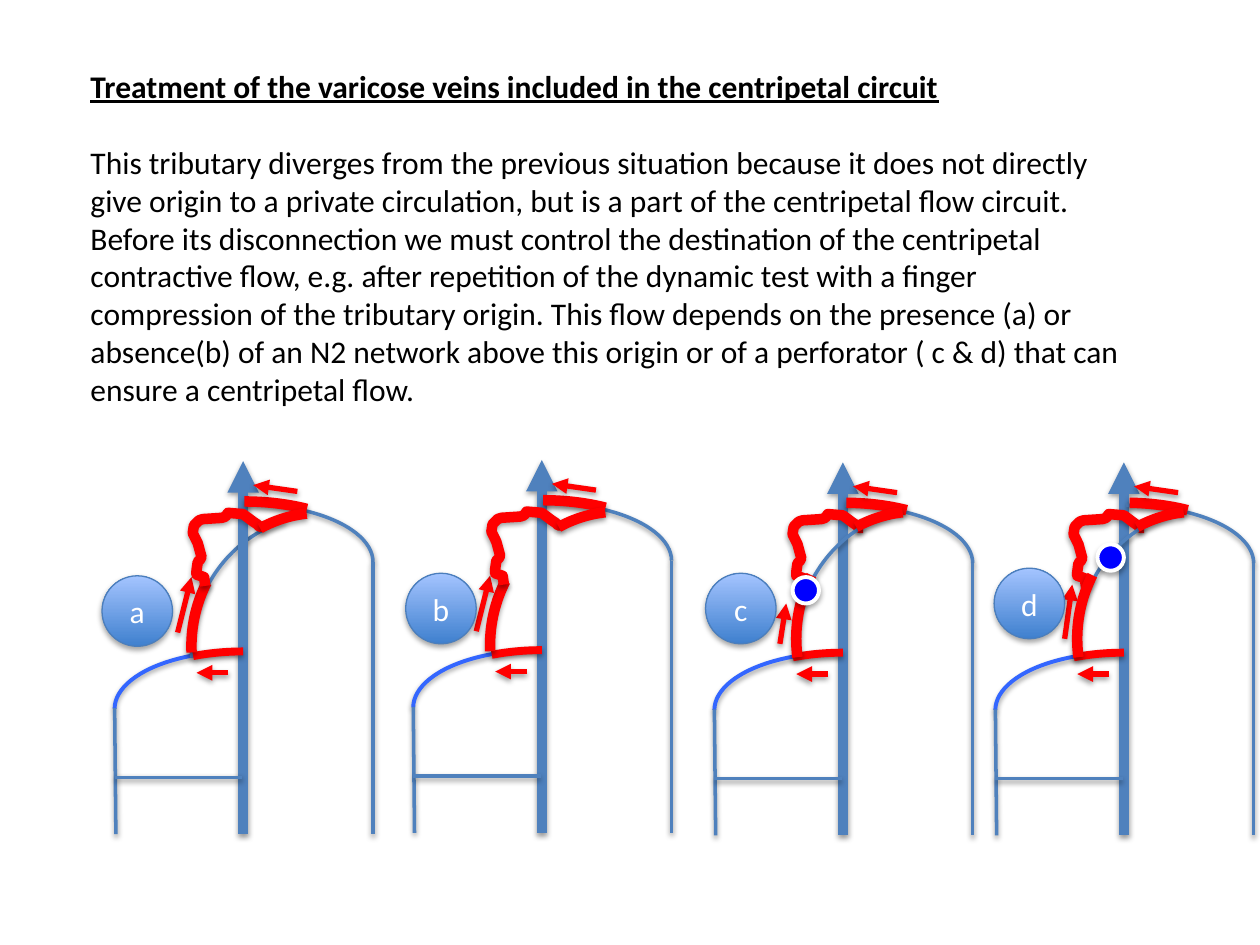
import pptx
import pptx.dml.color
import pptx.enum.shapes
import pptx.enum.text
import pptx.oxml
import pptx.oxml.ns
import pptx.util

Inches, Pt = pptx.util.Inches, pptx.util.Pt
Kind = pptx.enum.shapes.MSO_SHAPE

BLUE, VEIN, RED, WHITE = "4F81BD", "3366FF", "FF0000", "FFFFFF"

TITLE = "Treatment of the varicose veins included in the centripetal circuit"
BODY = (
    "This tributary diverges from the previous situation because it does not "
    "directly give origin to a private circulation, but is a part of the "
    "centripetal flow circuit. Before its disconnection we must control the "
    "destination of the centripetal contractive flow, e.g. after repetition of "
    "the dynamic test with a finger compression of the tributary origin. This "
    "flow depends on the presence (a) or absence(b) of an N2 network above this "
    "origin or of a perforator ( c & d) that can ensure a centripetal flow."
)

# Winding tributary, in inches, as it runs in the first leg
COIL = [
    (1.63, 4.65), (1.62, 4.58), (1.56, 4.56), (1.56, 4.53), (1.57, 4.46),
    (1.59, 4.44), (1.6, 4.42), (1.57, 4.31), (1.56, 4.29), (1.53, 4.23),
    (1.54, 4.17), (1.56, 4.15), (1.58, 4.13), (1.61, 4.12), (1.76, 4.11),
    (1.79, 4.1), (1.81, 4.07), (1.93, 4.08), (2.01, 4.14), (2.04, 4.16),
    (2.06, 4.18), (2.09, 4.18),
]

# Each leg: shift from the first, badge place, rising arrow, start of the top
# arc; "inner" is the blue arc; "late" puts the inner arcs on top; "dot" is
# the perforator
RISE = ((1.41, 5.02), (1.52, 4.58))
LEGS = [
    dict(name="a", shift=(0, 0), badge=(0.81, 4.57), rise=RISE, start=162,
         inner=True, late=False, dot=None),
    dict(name="b", shift=(2.37, -0.01), badge=(3.22, 4.55), rise=RISE, start=162,
         inner=False, late=False, dot=None),
    dict(name="c", shift=(4.76, 0.01), badge=(5.6, 4.55),
         rise=((1.43, 5.1), (1.48, 4.78)), start=163.25,
         inner=True, late=True, dot=(1.53, 4.57)),
    dict(name="d", shift=(6.99, 0.01), badge=(7.89, 4.51),
         rise=((1.46, 5.06), (1.52, 4.63)), start=164.64,
         inner=True, late=True, dot=(1.72, 4.31)),
]


def color(code):
    return pptx.dml.color.RGBColor.from_string(code)


def write(para, text, size=18, ink="000000", bold=False, under=False,
          align=None, after=0):
    run = para.add_run()
    run.text = text
    font = run.font
    font.name, font.size = "Calibri", Pt(size)
    font.bold, font.underline = bold, under
    font.color.rgb = color(ink)
    para.alignment = align
    para.space_after = Pt(after)


def shade(shape, alpha=38, dist=1.6):
    """Replace the theme's shadow with a soft one straight below."""
    shape._element.spPr.append(pptx.oxml.parse_xml(
        f'<a:effectLst {pptx.oxml.ns.nsdecls("a")}>'
        f'<a:outerShdw blurRad="{Pt(3.1)}" dist="{Pt(dist)}" dir="5400000" '
        f'rotWithShape="0"><a:srgbClr val="000000">'
        f'<a:alpha val="{alpha * 1000}"/></a:srgbClr></a:outerShdw></a:effectLst>'))


class Board:
    """Holds the slide, the line style and the shift of the current leg."""

    def __init__(self, slide):
        self.slide = slide
        self.shapes = slide.shapes
        self.shift = (0, 0)

    def place(self, x, y):
        return Inches(x + self.shift[0]), Inches(y + self.shift[1])

    def stroke(self, shape, ink, width):
        shape.line.color.rgb = color(ink)
        shape.line.width = Pt(width)

    def arc(self, x, y, wide, high, ink, width, span=None, flip=True):
        shape = self.shapes.add_shape(
            Kind.ARC, *self.place(x, y), Inches(wide), Inches(high))
        if span:
            shape.adjustments[0], shape.adjustments[1] = span
        if flip:
            shape._element.spPr.xfrm.set("flipH", "1")
        shape.fill.background()
        self.stroke(shape, ink, width)
        shade(shape)

    def line(self, start, end, ink=BLUE, width=2, tip=None):
        link = self.shapes.add_connector(
            pptx.enum.shapes.MSO_CONNECTOR.STRAIGHT,
            *self.place(*start), *self.place(*end))
        self.stroke(link, ink, width)
        if tip:
            link._element.spPr.find(pptx.oxml.ns.qn("a:ln")).append(
                pptx.oxml.parse_xml(
                    f'<a:{tip} {pptx.oxml.ns.nsdecls("a")} type="triangle"/>'))
        shade(link)

    def arrow(self, start, end):
        self.line(start, end, RED, 3, "tailEnd")

    def trail(self, points, ink, width):
        spots = [self.place(*point) for point in points]
        pen = self.shapes.build_freeform(*spots[0])
        pen.add_line_segments(spots[1:], close=False)
        shape = pen.convert_to_shape()
        shape.fill.background()
        self.stroke(shape, ink, width)
        shade(shape)

    def disc(self, x, y, size, ink, width):
        shape = self.shapes.add_shape(
            Kind.OVAL, *self.place(x, y), Inches(size), Inches(size))
        self.stroke(shape, ink, width)
        shade(shape, 35, 1.8)
        return shape

    def dot(self, x, y):
        shape = self.disc(x, y, 0.21, WHITE, 2.25)
        shape.fill.solid()
        shape.fill.fore_color.rgb = color("0000FF")

    def badge(self, x, y, name):
        shape = self.disc(x, y, 0.56, "4B7EBC", 0.75)
        shape.fill.gradient()
        shape.fill.gradient_angle = 90
        for stop, ink in zip(shape.fill.gradient_stops, ("3F80CE", "A4C4FF")):
            stop.color.rgb = color(ink)
        frame = shape.text_frame
        frame.vertical_anchor = pptx.enum.text.MSO_ANCHOR.MIDDLE
        write(frame.paragraphs[0], name, ink=WHITE,
              align=pptx.enum.text.PP_ALIGN.CENTER)

    def text(self, x, y, wide, high):
        frame = self.shapes.add_textbox(
            *self.place(x, y), Inches(wide), Inches(high)).text_frame
        frame.word_wrap = True
        frame.auto_size = pptx.enum.text.MSO_AUTO_SIZE.SHAPE_TO_FIT_TEXT
        return frame

    def leg(self, leg):
        self.shift = leg["shift"]
        late = leg["late"]

        def blue():
            if leg["inner"]:
                spot = (1.56, 4.03) if late else (1.52, 4.09)
                self.arc(*spot, 2.07, 2.16, BLUE, 2, (171.44, 1.63))

        def red():
            spot, end = ((1.56, 3.98), 4.89) if late else ((1.52, 4.05), 1.63)
            self.arc(*spot, 2.07, 2.16, RED, 6, (198.68, end))

        # Limb outline and deep trunk
        self.arc(0.91, 5.17, 1.97, 0.91, VEIN, 2.25)
        if not late:
            blue()
        self.line((1.93, 3.66), (1.93, 6.62), width=6, tip="headEnd")
        self.arc(0.94, 4, 2.02, 0.92, BLUE, 2, flip=False)
        self.line((2.96, 4.46), (2.96, 6.62))
        self.arc(0.92, 5.17, 2.02, 0.92, RED, 4.5, (162, 187.91))
        self.line((0.91, 5.62), (0.92, 6.62))
        self.line((0.91, 6.17), (1.92, 6.17))

        # Refluxing veins and flow arrows
        self.arrow((1.81, 5.34), (1.56, 5.34))
        if not late:
            red()
        self.arc(0.93, 3.98, 2.02, 0.92, RED, 6, (leg["start"], 192.62), False)
        self.arrow(*leg["rise"])
        self.arrow((2.36, 3.9), (2.01, 3.85))
        self.trail(COIL, RED, 6)
        if late:
            blue()
            red()
        side = (1.48, 4.05) if late else (1.51, 4.07)
        self.arc(*side, 2.07, 2.16, RED, 6, (165.52, 177.97))
        if leg["dot"]:
            self.dot(*leg["dot"])
        self.shift = (0, 0)


def main():
    deck = pptx.Presentation()
    deck.slide_width, deck.slide_height = Inches(10), Inches(7.5)
    board = Board(deck.slides.add_slide(deck.slide_layouts[6]))

    # Heading and body
    frame = board.text(0.62, 0.48, 8.4, 2.83)
    write(frame.paragraphs[0], TITLE, bold=True, under=True, after=22)
    write(frame.add_paragraph(), BODY)

    # Four legs, then their letters on top
    for leg in LEGS:
        board.leg(leg)
    for leg in LEGS:
        board.badge(*leg["badge"], leg["name"])
    deck.save("out.pptx")


if __name__ == "__main__":
    main()
